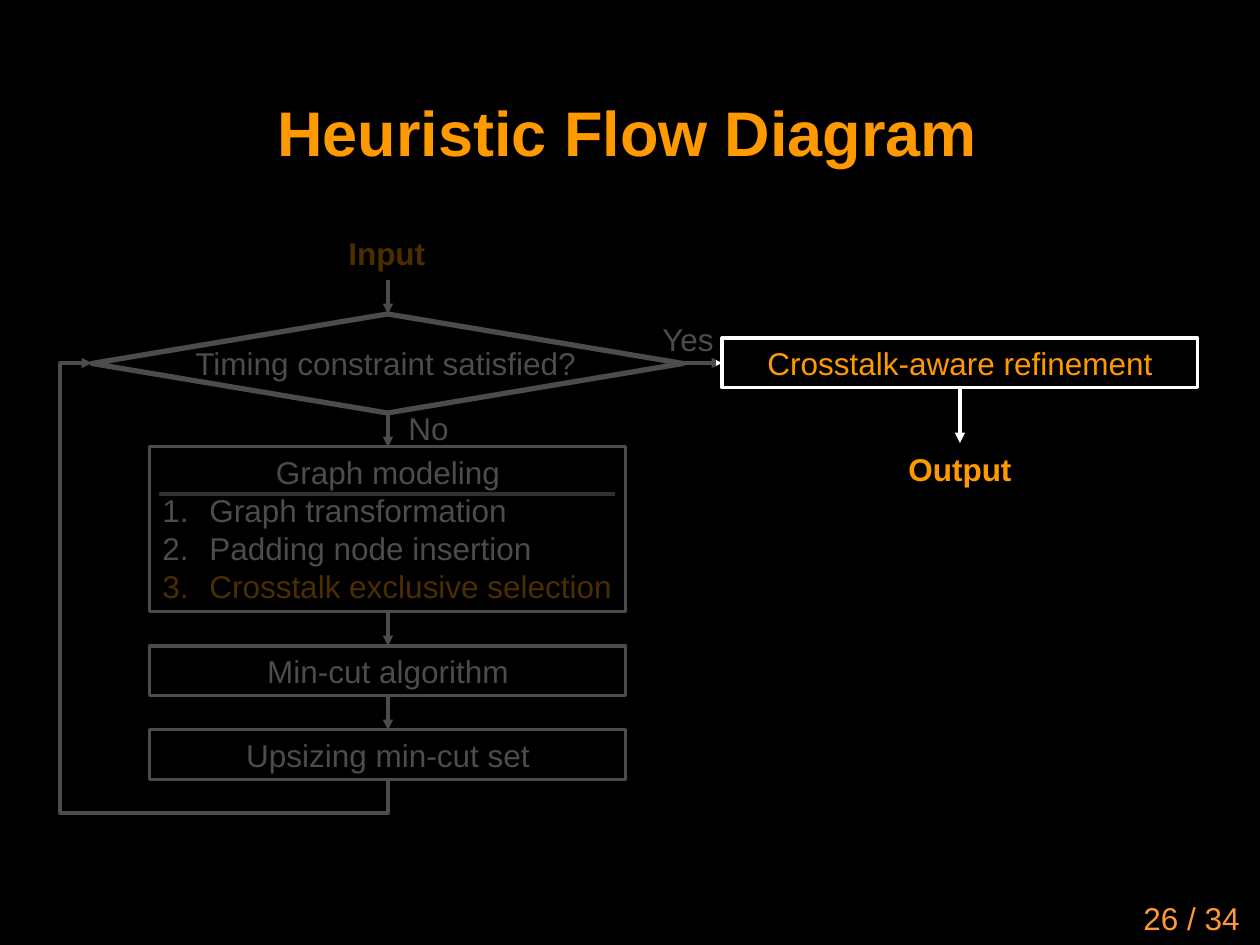
import pptx
import pptx.util
import pptx.dml.color
import pptx.enum.shapes
import pptx.enum.text
import pptx.oxml
import pptx.oxml.ns

KIND = pptx.enum.shapes.MSO_SHAPE
ALIGN = pptx.enum.text.PP_ALIGN
ANCHOR = pptx.enum.text.MSO_ANCHOR

WHITE, GOLD, GRAY, BLACK = "FFFFFF", "FF9900", "A3A3A3", "000000"
HIGH, WIDE, MID, GAP = 50, 476, 388, 34
LEFT = MID - WIDE // 2
TOP, TALL = 447, 165
CUT = TOP + TALL + GAP
SIZE = CUT + HIGH + GAP
END = SIZE + HIGH

PLAIN = {"size": 18, "name": "Arial", "bold": False}
BOLD = {**PLAIN, "bold": True}
HEAD = {**BOLD, "size": 36}

BOXES = [
    (KIND.DIAMOND, (92, 314, 591, 99), 3, []),
    (KIND.RECTANGLE, (722, 338, WIDE, HIGH), 1.75,
     [("Crosstalk-aware refinement", GOLD)]),
    (KIND.RECTANGLE, (LEFT, TOP, WIDE, TALL), 1.75,
     [("Graph modeling", WHITE), ("Graph transformation", WHITE),
      ("Padding node insertion", WHITE),
      ("Crosstalk exclusive selection", GOLD)]),
    (KIND.RECTANGLE, (LEFT, CUT, WIDE, HIGH), 1.75,
     [("Min-cut algorithm", WHITE)]),
    (KIND.RECTANGLE, (LEFT, SIZE, WIDE, HIGH), 1.75,
     [("Upsizing min-cut set", WHITE)]),
]
LABELS = [
    ("Input", (336, 228, 103, HIGH), GOLD, BOLD),
    ("Output", (896, 444, 130, HIGH), GOLD, BOLD),
    ("Timing constraint satisfied?", (183, 338, 410, HIGH), WHITE, PLAIN),
    ("Yes", (650, 314, 77, HIGH), WHITE, PLAIN),
    ("No", (396, 403, 66, HIGH), WHITE, PLAIN),
]
ARROWS = [(MID, y - GAP, MID, y) for y in (314, TOP, CUT, SIZE)]
ARROWS += [(683, 363, 722, 363), (960, 388, 960, 443)]
LOOP = [(MID, END), (MID, 813), (60, 813), (60, 363), (92, 363)]


def px(*vals):
    return [round(v * 914400 / 126) for v in vals]


def color(text):
    return pptx.dml.color.RGBColor.from_string(text)


def node(home, tag, **attrs):
    item = pptx.oxml.ns.qn(tag)
    child = home.makeelement(item, attrs)
    home.append(child)
    return child


def stroke(shape, tint=WHITE, width=1.75, tip=False):
    shape.line.color.rgb = color(tint)
    shape.line.width = pptx.util.Pt(width)
    if tip:
        node(shape.line._get_or_add_ln(), "a:tailEnd", type="triangle")


def write(para, text, tint, form, align):
    para.alignment = align
    run = para.add_run()
    run.text = text
    run.font.color.rgb = color(tint)
    for key, val in form.items():
        setattr(run.font, key, pptx.util.Pt(val) if key == "size" else val)


def label(slide, text, spot, tint, form, align=ALIGN.LEFT, wrap=False,
          anchor=ANCHOR.TOP):
    frame = slide.shapes.add_textbox(*px(*spot)).text_frame
    frame.word_wrap = wrap
    frame.vertical_anchor = anchor
    write(frame.paragraphs[0], text, tint, form, align)


def box(slide, kind, spot, width, lines):
    shape = slide.shapes.add_shape(kind, *px(*spot))
    shape.shadow.inherit = False
    shape.fill.background()
    stroke(shape, width=width)
    frame = shape.text_frame
    frame.word_wrap = True
    frame.vertical_anchor = ANCHOR.TOP
    for i, (text, tint) in enumerate(lines):
        para = frame.add_paragraph() if i else frame.paragraphs[0]
        write(para, text, tint, PLAIN, ALIGN.LEFT if i else ALIGN.CENTER)
        if i:
            props = para._p.get_or_add_pPr()
            inset = px(47)[0]
            props.set("marL", str(inset))
            props.set("indent", str(-inset))
            node(props, "a:buFont", typeface="+mj-lt")
            node(props, "a:buAutoNum", type="arabicPeriod")


def link(slide, ends, tint=WHITE, tip=True):
    line = slide.shapes.add_connector(
        pptx.enum.shapes.MSO_CONNECTOR.STRAIGHT, *px(*ends))
    stroke(line, tint, tip=tip)
    node(line._element.spPr, "a:effectLst")


def loop(slide):
    first, *rest = [px(*spot) for spot in LOOP]
    pen = slide.shapes.build_freeform(*first)
    pen.add_line_segments(rest, close=False)
    shape = pen.convert_to_shape()
    shape.shadow.inherit = False
    shape.fill.background()
    stroke(shape, tip=True)


def veil(slide):
    shape = slide.shapes.add_shape(KIND.RECTANGLE, *px(38, 205, 678, 667))
    shape.shadow.inherit = False
    shape.fill.solid()
    shape.fill.fore_color.rgb = color(BLACK)
    shape.line.fill.background()
    tone = shape._element.spPr.find(".//" + pptx.oxml.ns.qn("a:srgbClr"))
    node(tone, "a:alpha", val="70000")


def main():
    deck = pptx.Presentation()
    deck.slide_width, deck.slide_height = px(1260, 945)
    slide = deck.slides.add_slide(deck.slide_layouts[6])
    slide.background.fill.solid()
    slide.background.fill.fore_color.rgb = color(BLACK)
    label(slide, "Heuristic Flow Diagram", (92, 73, 1071, 117), GOLD, HEAD,
          ALIGN.CENTER, True, ANCHOR.MIDDLE)
    for item in BOXES:
        box(slide, *item)
    link(slide, (159, 494, 615, 494), GRAY, False)
    for ends in ARROWS:
        link(slide, ends)
    loop(slide)
    for item in LABELS:
        label(slide, *item)
    veil(slide)
    label(slide, "26 / 34", (990, 893, 262, 63), "FF9933", PLAIN,
          ALIGN.RIGHT, True)
    deck.save("out.pptx")


if __name__ == "__main__":
    main()
